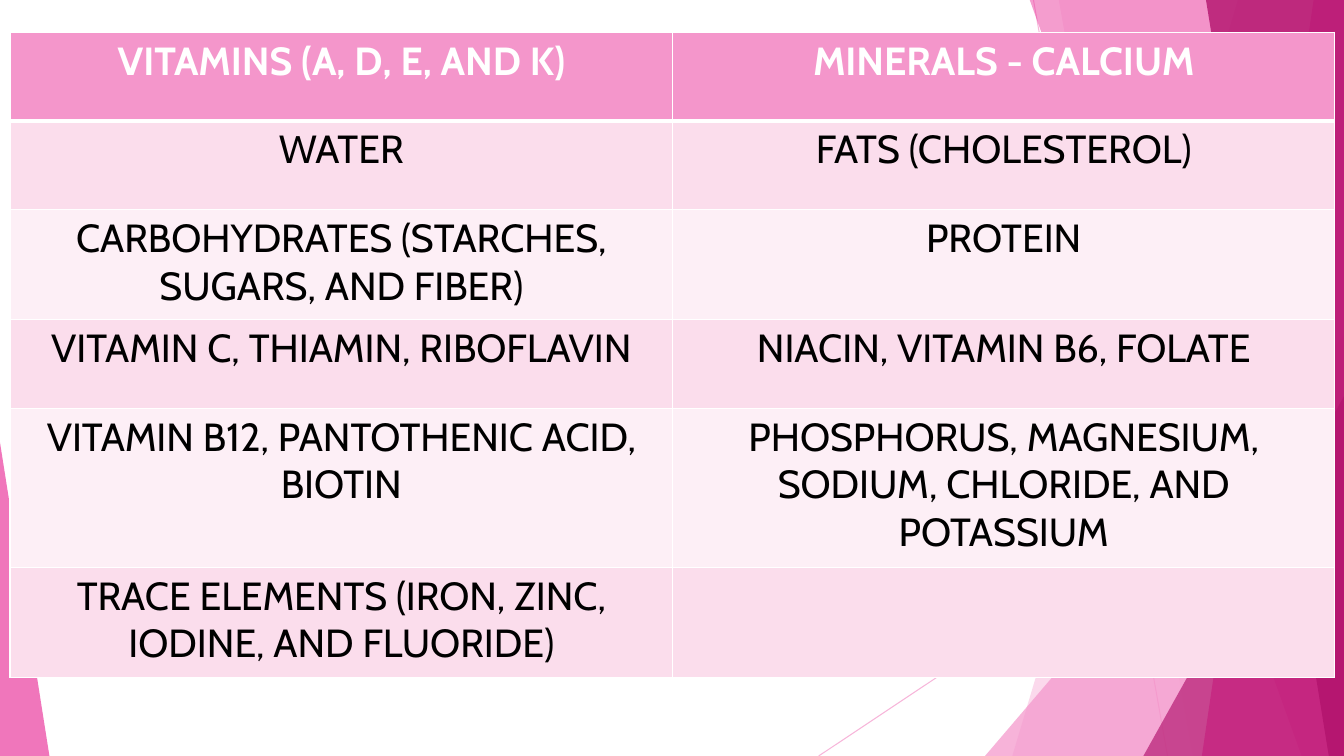
import lxml.etree
import pptx
import pptx.dml.color
import pptx.enum.shapes
import pptx.enum.text
import pptx.oxml.ns
import pptx.util

Inches, Pt = pptx.util.Inches, pptx.util.Pt
RGBColor = pptx.dml.color.RGBColor
SHAPE = pptx.enum.shapes.MSO_SHAPE
qn = pptx.oxml.ns.qn

PINK = RGBColor(0xF4, 0x96, 0xCB)
ROSE = RGBColor(0xEB, 0x3D, 0x9F)
MAGENTA = RGBColor(0xB2, 0x13, 0x6D)
BAND_DARK = RGBColor(0xFB, 0xDD, 0xEC)
BAND_LIGHT = RGBColor(0xFD, 0xEF, 0xF6)
WHITE = RGBColor(0xFF, 0xFF, 0xFF)
BLACK = RGBColor(0, 0, 0)

# Content
NUTRIENTS = [
    ("VITAMINS (A, D, E, AND K)", "MINERALS - CALCIUM"),
    ("WATER", "FATS (CHOLESTEROL)"),
    ("CARBOHYDRATES (STARCHES, SUGARS, AND FIBER)", "PROTEIN"),
    ("VITAMIN C, THIAMIN, RIBOFLAVIN", "NIACIN, VITAMIN B6, FOLATE"),
    ("VITAMIN B12, PANTOTHENIC ACID, BIOTIN",
     "PHOSPHORUS, MAGNESIUM, SODIUM, CHLORIDE, AND POTASSIUM"),
    ("TRACE ELEMENTS (IRON, ZINC, IODINE, AND FLUORIDE)", ""),
]
ROW_HEIGHTS = [0.88, 0.88, 1.09, 0.88, 1.58, 1.09]
COLUMN_WIDTH = 6.57
TABLE_LEFT, TABLE_TOP = 0.1, 0.32

# Backdrop, from back to front
SLIDE_WIDTH, SLIDE_HEIGHT, FACET_TOP = 13.33, 7.5, -0.01
RAYS = [((10.25, 0), (11.58, 7.5)), ((13.33, 4.03), (8.12, 7.5))]
FACETS = [  # ("band", top x, bottom x) or ("triangle", left, top, width, apex), colour, opacity
    (("band", 12.28, 10.04), PINK, 36),
    (("band", 10.5, 11.83), PINK, 20),
    (("triangle", 9.77, 3.33, 3.56, 1), PINK, 72),
    (("band", 10.21, 12.91), ROSE, 50),
    (("band", 13.03, 11.92), ROSE, 70),
    (("band", 11.96, 13.18), MAGENTA, 80),
    (("triangle", 11.34, 3.93, 1.99, 1), MAGENTA, 66),
    (("triangle", 0, 4.39, 0.49, 0), ROSE, 70),
]


def set_opacity(properties, percent):
    colour = next(properties.iter(qn("a:srgbClr")))
    lxml.etree.SubElement(colour, qn("a:alpha"), val=str(percent * 1000))


def add_ray(shapes, start, end):
    ray = shapes.add_connector(pptx.enum.shapes.MSO_CONNECTOR.STRAIGHT,
                               *map(Inches, start + end))
    ray.line.color.rgb = PINK
    ray.line.width = Pt(0.75)
    properties = ray._element.spPr
    set_opacity(properties, 70)
    lxml.etree.SubElement(properties, qn("a:effectLst"))


def add_facet(shapes, outline, colour, opacity):
    kind, *geometry = outline
    if kind == "band":
        top_x, bottom_x = geometry
        builder = shapes.build_freeform(Inches(top_x), Inches(FACET_TOP))
        corners = [(SLIDE_WIDTH, FACET_TOP), (SLIDE_WIDTH, SLIDE_HEIGHT),
                   (bottom_x, SLIDE_HEIGHT)]
        builder.add_line_segments([(Inches(x), Inches(y)) for x, y in corners])
        facet = builder.convert_to_shape()
    else:
        left, top, width, apex = geometry
        facet = shapes.add_shape(SHAPE.ISOSCELES_TRIANGLE, Inches(left), Inches(top),
                                 Inches(width), Inches(SLIDE_HEIGHT - top))
        facet.adjustments[0] = apex
    facet.shadow.inherit = False
    facet.fill.solid()
    facet.fill.fore_color.rgb = colour
    set_opacity(facet._element.spPr, opacity)
    facet.line.fill.background()


def write(frame, text, colour=BLACK, bold=False, size=28, font="Cabin"):
    paragraph = frame.paragraphs[0]
    paragraph.alignment = pptx.enum.text.PP_ALIGN.CENTER
    run = paragraph.add_run()
    run.text = text
    run.font.name, run.font.size = font, Pt(size)
    run.font.bold, run.font.color.rgb = bold, colour


def add_borders(cell, top=1, bottom=1):
    properties = cell._tc.get_or_add_tcPr()
    sides = {"lnL": 1, "lnR": 1, "lnT": top, "lnB": bottom}
    for position, (side, width) in enumerate(sides.items()):
        border = lxml.etree.Element(qn("a:" + side), w=str(Pt(width)))
        fill = lxml.etree.SubElement(border, qn("a:solidFill"))
        lxml.etree.SubElement(fill, qn("a:srgbClr"), val=str(WHITE))
        properties.insert(position, border)


def add_nutrient_table(shapes):
    columns = len(NUTRIENTS[0])
    table = shapes.add_table(
        len(NUTRIENTS), columns, Inches(TABLE_LEFT), Inches(TABLE_TOP),
        Inches(COLUMN_WIDTH * columns), Inches(sum(ROW_HEIGHTS))).table
    for column in table.columns:
        column.width = Inches(COLUMN_WIDTH)
    for row, (texts, height) in enumerate(zip(NUTRIENTS, ROW_HEIGHTS)):
        table.rows[row].height = Inches(height)
        header = row == 0
        band = PINK if header else BAND_DARK if row % 2 else BAND_LIGHT
        for cell, text in zip(table.rows[row].cells, texts):
            cell.fill.solid()
            cell.fill.fore_color.rgb = band
            add_borders(cell, top=3 if row == 1 else 1, bottom=3 if header else 1)
            if text:
                write(cell.text_frame, text, colour=WHITE if header else BLACK, bold=header)


def main():
    deck = pptx.Presentation()
    deck.slide_width, deck.slide_height = Inches(SLIDE_WIDTH), Inches(SLIDE_HEIGHT)
    slide = deck.slides.add_slide(deck.slide_layouts[6])
    for start, end in RAYS:
        add_ray(slide.shapes, start, end)
    for outline, colour, opacity in FACETS:
        add_facet(slide.shapes, outline, colour, opacity)
    add_nutrient_table(slide.shapes)
    deck.save("out.pptx")


if __name__ == "__main__":
    main()
